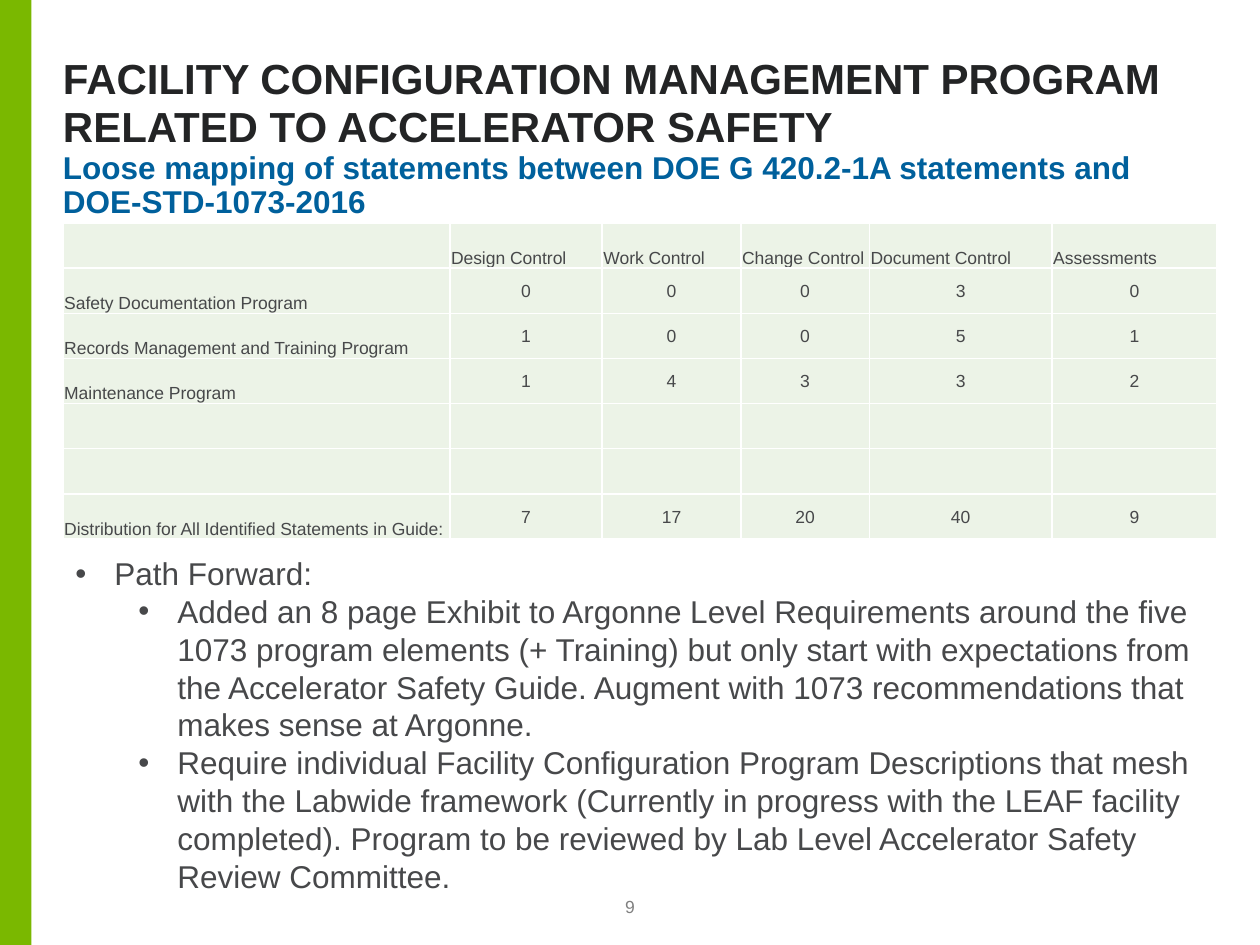
import pptx
import pptx.dml.color
import pptx.enum.shapes
import pptx.enum.text
import pptx.oxml
import pptx.oxml.ns
import pptx.util

Inches = pptx.util.Inches
Pt = pptx.util.Pt
ANCHOR = pptx.enum.text.MSO_ANCHOR
ALIGN = pptx.enum.text.PP_ALIGN

COLORS = {
    "accent": "7AB800",
    "title": "232425",
    "subtitle": "00609C",
    "body": "47484A",
    "page": "808080",
    "cell": "ECF3E7",
    "border": "FFFFFF",
}
FORMATS = {
    "title": {"size": Pt(24), "bold": True},
    "subtitle": {"size": Pt(18), "bold": True},
    "body": {"size": Pt(18), "bold": False},
    "cell": {"size": Pt(10), "bold": False},
    "page": {"size": Pt(10), "bold": False},
}

TITLE = "FACILITY CONFIGURATION MANAGEMENT PROGRAM RELATED TO ACCELERATOR SAFETY"
SUBTITLE = ("Loose mapping of statements between DOE G 420.2-1A statements and "
            "DOE-STD-1073-2016")
COLUMN_WIDTHS = [3.07, 1.21, 1.1, 1.02, 1.45, 1.31]
TABLE_ROWS = [
    ["", "Design Control", "Work Control", "Change Control",
     "Document Control", "Assessments"],
    ["Safety Documentation Program", 0, 0, 0, 3, 0],
    ["Records Management and Training Program", 1, 0, 0, 5, 1],
    ["Maintenance Program", 1, 4, 3, 3, 2],
    [""] * 6,
    [""] * 6,
    ["Distribution for All Identified Statements in Guide:", 7, 17, 20, 40, 9],
]
PATH_FORWARD = [
    (0, "Path Forward:"),
    (1, "Added an 8 page Exhibit to Argonne Level Requirements around the five "
        "1073 program elements (+ Training) but only start with expectations from "
        "the Accelerator Safety Guide. Augment with 1073 recommendations that "
        "makes sense at Argonne."),
    (1, "Require individual Facility Configuration Program Descriptions that mesh "
        "with the Labwide framework (Currently in progress with the LEAF facility "
        "completed). Program to be reviewed by Lab Level Accelerator Safety "
        "Review Committee."),
]


def rgb(name):
    return pptx.dml.color.RGBColor.from_string(COLORS[name])


def set_attributes(target, values):
    for name, value in values.items():
        setattr(target, name, value)


def write_text(paragraph, text, style, color):
    run = paragraph.add_run()
    run.text = text
    set_attributes(run.font, {"name": "Arial", **FORMATS[style]})
    run.font.color.rgb = rgb(color)


def add_text_frame(slide, box, margins, anchor=ANCHOR.TOP):
    frame = slide.shapes.add_textbox(*map(Inches, box)).text_frame
    sides = ("margin_left", "margin_top", "margin_right", "margin_bottom")
    set_attributes(frame, {"word_wrap": True, "vertical_anchor": anchor})
    set_attributes(frame, dict(zip(sides, map(Inches, margins))))
    return frame


def add_side_bar(slide, box):
    bar = slide.shapes.add_shape(
        pptx.enum.shapes.MSO_SHAPE.RECTANGLE, *map(Inches, box))
    bar.shadow.inherit = False
    bar.fill.solid()
    bar.fill.fore_color.rgb = rgb("accent")
    bar.line.fill.background()


def add_label(slide, box, text, style, paragraph_format,
              margins=(0, 0, 0, 0), anchor=ANCHOR.TOP):
    paragraph = add_text_frame(slide, box, margins, anchor).paragraphs[0]
    set_attributes(paragraph, paragraph_format)
    write_text(paragraph, text, style, style)


def add_cell_borders(cell):
    properties = cell._tc.get_or_add_tcPr()
    for position, side in enumerate(("lnL", "lnR", "lnT", "lnB")):
        properties.insert(position, pptx.oxml.parse_xml(
            f'<a:{side} {pptx.oxml.ns.nsdecls("a")} w="{Pt(1)}"><a:solidFill>'
            f'<a:srgbClr val="{COLORS["border"]}"/></a:solidFill></a:{side}>'))


def fill_cell(cell, value):
    is_number = isinstance(value, int)
    set_attributes(cell, {
        "margin_left": Inches(0.01),
        "margin_top": Inches(0.01),
        "margin_right": Inches(0.01),
        "margin_bottom": 0,
        "vertical_anchor": ANCHOR.MIDDLE if is_number else ANCHOR.BOTTOM,
    })
    cell.fill.solid()
    cell.fill.fore_color.rgb = rgb("cell")
    add_cell_borders(cell)
    if value != "":
        paragraph = cell.text_frame.paragraphs[0]
        paragraph.alignment = ALIGN.CENTER if is_number else ALIGN.LEFT
        write_text(paragraph, str(value), "cell", "body")


def add_mapping_table(slide, box):
    table = slide.shapes.add_table(
        len(TABLE_ROWS), len(COLUMN_WIDTHS), *map(Inches, box)).table
    set_attributes(table, {"first_row": False, "horz_banding": False})
    for column, width in zip(table.columns, COLUMN_WIDTHS):
        column.width = Inches(width)
    for row, values in zip(table.rows, TABLE_ROWS):
        row.height = Inches(box[3] / len(TABLE_ROWS))
        for cell, value in zip(row.cells, values):
            fill_cell(cell, value)


def add_path_forward(slide, box):
    frame = add_text_frame(slide, box, (0.1, 0.05, 0.1, 0.05))
    for index, (level, text) in enumerate(PATH_FORWARD):
        paragraph = frame.add_paragraph() if index else frame.paragraphs[0]
        paragraph.level = level
        # Hanging bullet, half an inch deeper per level
        properties = paragraph._p.get_or_add_pPr()
        properties.set("marL", str(Inches(0.31 + 0.5 * level)))
        properties.set("indent", str(Inches(-0.31)))
        properties.append(pptx.oxml.parse_xml(
            f'<a:buFont {pptx.oxml.ns.nsdecls("a")} typeface="Arial"/>'))
        properties.append(pptx.oxml.parse_xml(
            f'<a:buChar {pptx.oxml.ns.nsdecls("a")} char="•"/>'))
        write_text(paragraph, text, "body", "body")


def main():
    presentation = pptx.Presentation()
    presentation.slide_width = Inches(10)
    presentation.slide_height = Inches(7.5)
    slide = presentation.slides.add_slide(presentation.slide_layouts[6])
    left, width = 0.5, 9.16

    # Side bar and headings
    add_side_bar(slide, (0, 0, 0.25, 7.5))
    add_label(slide, (left, 0.3, width, 0.91), TITLE, "title",
              {"line_spacing": 0.95}, anchor=ANCHOR.BOTTOM)
    add_label(slide, (left, 1.21, width, 0.55), SUBTITLE, "subtitle",
              {"line_spacing": 0.9})

    # Table and next steps
    add_mapping_table(slide, (left, 1.77, width, 2.51))
    add_path_forward(slide, (left, 4.35, width, 2.83))

    # Page number
    add_label(slide, (4.75, 7.08, 0.5, 0.2), "9", "page",
              {"alignment": ALIGN.CENTER}, (0, 0.05, 0, 0), ANCHOR.BOTTOM)
    presentation.save("out.pptx")


if __name__ == "__main__":
    main()
